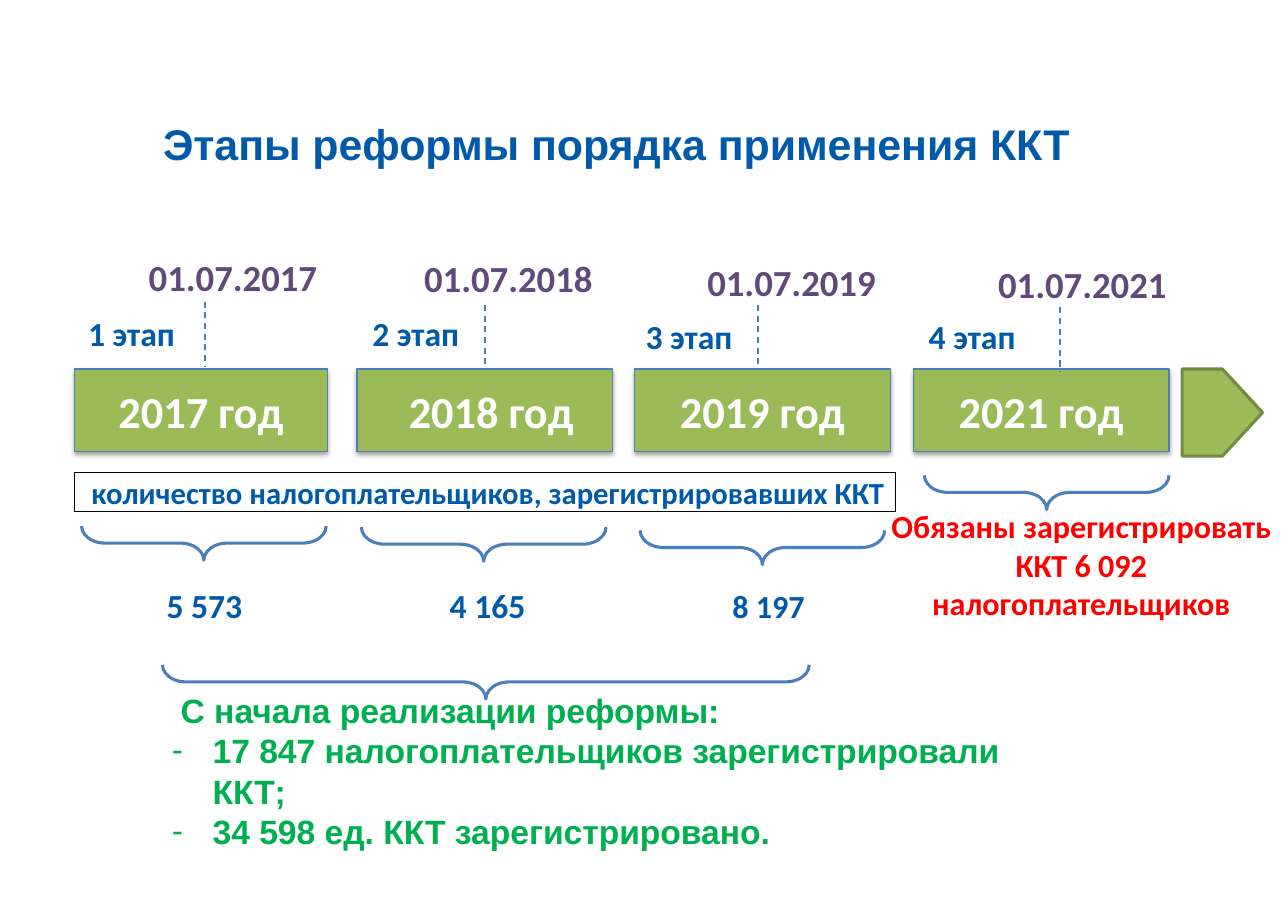
from dataclasses import dataclass

from lxml import etree
from pptx import Presentation
from pptx.dml.color import RGBColor
from pptx.enum.dml import MSO_LINE
from pptx.enum.shapes import MSO_CONNECTOR, MSO_SHAPE
from pptx.enum.text import MSO_ANCHOR, MSO_AUTO_SIZE, PP_ALIGN
from pptx.oxml import parse_xml
from pptx.oxml.ns import nsdecls, qn
from pptx.util import Inches, Pt

LEFT, CENTER = PP_ALIGN.LEFT, PP_ALIGN.CENTER
BLUE, GREEN, LINE_BLUE = "005AA9", "00B050", "4B7EBC"
BAR_GREEN, BAR_EDGE = "9BBB59", "738A42"
PURPLE, RED, WHITE, BLACK = "604A7B", "FF0000", "FFFFFF", "000000"
BAR_TOP, BAR_HEIGHT = 3.35, 0.75
BRACE_SPAN, BRACE_DEPTH = 2.22, 0.31


@dataclass
class Stage:
    year: str
    bar: tuple[float, float]  # left, width
    date_at: tuple[float, float]
    label_at: tuple[float, float]
    tick: tuple[float, float, float]  # x, top, bottom
    brace: tuple[float, float]  # centre
    count: str = ""
    count_left: float = 0
    count_size: float = 22
    shift: float = 0


STAGES = [
    Stage("2017", (0.68, 2.29), (1.2, 2.3), (0.65, 2.81), (1.86, 2.74, 3.32),
          (1.85, 4.93), "5 573", 0.91),
    Stage("2018", (3.24, 2.32), (3.7, 2.31), (3.23, 2.81), (4.4, 2.77, 3.35),
          (4.39, 4.94), "4 165", 3.48, shift=0.12),
    Stage("2019", (5.76, 2.32), (6.27, 2.34), (5.71, 2.84), (6.88, 2.77, 3.35),
          (6.92, 4.97), "8 197", 6.03, 21),
    Stage("2021", (8.29, 2.32), (8.91, 2.36), (8.28, 2.84), (9.62, 2.79, 3.38),
          (9.5, 4.47)),
]


def rgb(color: str) -> RGBColor:
    return RGBColor.from_string(color)


def place(sp, left: float, top: float, width: float, height: float) -> None:
    sp.left, sp.top = Inches(left), Inches(top)
    sp.width, sp.height = Inches(width), Inches(height)


def write(sp, text: str, *, size: float, color: str, font: str = "Calibri",
          align=LEFT, insets=(0.15, 0.07), shift: float = 0, wrap: bool = False):
    """Fill a shape with bold text, one paragraph a line; shift widens the left inset."""
    tf = sp.text_frame
    tf.text = text
    tf.auto_size = MSO_AUTO_SIZE.NONE
    tf.word_wrap = wrap
    tf.vertical_anchor = MSO_ANCHOR.MIDDLE
    tf.margin_left, tf.margin_right = Inches(insets[0] + shift), Inches(insets[0])
    tf.margin_top = tf.margin_bottom = Inches(insets[1])
    for p in tf.paragraphs:
        p.alignment = align
        p.space_before = Pt(0)
        for r in p.runs:
            r.font.size, r.font.bold, r.font.name = Pt(size), True, font
            r.font.color.rgb = rgb(color)
    return tf


def add_label(slide, text: str, left: float, top: float, width: float = 1.17,
              height: float = 0.43, **fmt) -> None:
    sp = slide.shapes.add_textbox(0, 0, 0, 0)
    place(sp, left, top, width, height)
    write(sp, text, **fmt)


def add_outline(slide, kind, left: float, top: float, width: float, height: float,
                *, line: str, weight: float, fill: str = ""):
    sp = slide.shapes.add_shape(kind, Inches(left), Inches(top), Inches(width), Inches(height))
    sp.shadow.inherit = False
    if fill:
        sp.fill.solid()
        sp.fill.fore_color.rgb = rgb(fill)
    else:
        sp.fill.background()
    sp.line.color.rgb = rgb(line)
    sp.line.width = Pt(weight)
    return sp


def add_brace(slide, cx: float, cy: float, span: float = BRACE_SPAN,
              depth: float = BRACE_DEPTH) -> None:
    """Draw a brace that points down, centred on (cx, cy)."""
    sp = add_outline(slide, MSO_SHAPE.LEFT_BRACE, cx - depth / 2, cy - span / 2,
                     depth, span, line=LINE_BLUE, weight=2)
    sp.adjustments[0] = 0.685
    sp.rotation = 270


def add_bar_shadow(sp) -> None:
    effects = sp._element.spPr.find(qn("a:effectLst"))
    effects.append(parse_xml(
        f'<a:outerShdw {nsdecls("a")} blurRad="{Pt(3.1)}" dist="{Pt(1.8)}" dir="5400000" '
        'rotWithShape="0"><a:srgbClr val="000000"><a:alpha val="35000"/></a:srgbClr>'
        '</a:outerShdw>'))


def add_tick(slide, bar, x: float, top: float, bottom: float) -> None:
    tick = slide.shapes.add_connector(MSO_CONNECTOR.STRAIGHT, Inches(x), Inches(top),
                                      Inches(x), Inches(bottom))
    if abs(bar.left + bar.width / 2 - Inches(x)) < Inches(0.01):
        tick.end_connect(bar, 0)
    tick.line.color.rgb = rgb(LINE_BLUE)
    tick.line.width = Pt(1)
    tick.line.dash_style = MSO_LINE.DASH
    etree.SubElement(tick._element.spPr, qn("a:effectLst"))


def add_stage(slide, number: int, stage: Stage) -> None:
    left, width = stage.bar
    bar = add_outline(slide, MSO_SHAPE.RECTANGLE, left, BAR_TOP, width, BAR_HEIGHT,
                      line=LINE_BLUE, weight=0.75, fill=BAR_GREEN)
    add_bar_shadow(bar)
    write(bar, f"{stage.year} год", size=29, color=WHITE, align=CENTER,
          insets=(0.13, 0.06), shift=stage.shift, wrap=True)
    add_label(slide, f"01.07.{stage.year}", *stage.date_at, size=24, color=PURPLE)
    add_label(slide, f"{number} этап", *stage.label_at, size=22, color=BLUE)
    add_tick(slide, bar, *stage.tick)
    add_brace(slide, *stage.brace)
    if stage.count:
        add_label(slide, stage.count, stage.count_left, 5.32, 1.89, 0.35,
                  size=stage.count_size, color=BLUE, align=CENTER)


def set_bullet(p, char: str, margin: float, indent: float) -> None:
    pPr = p._p.get_or_add_pPr()
    pPr.set("marL", str(Inches(margin)))
    pPr.set("indent", str(Inches(indent)))
    if char:
        etree.SubElement(pPr, qn("a:buChar")).set("char", char)
    else:
        etree.SubElement(pPr, qn("a:buNone"))


def add_summary(body) -> None:
    place(body, 1.41, 6.47, 8.41, 1.05)
    tf = write(body, "С начала реализации реформы:\n"
               "17 847 налогоплательщиков зарегистрировали ККТ;\n"
               "34 598 ед. ККТ зарегистрировано.", size=22, color=GREEN, font="Arial")
    heading, *items = tf.paragraphs
    set_bullet(heading, "", 0.08, 0)
    for p in items:
        set_bullet(p, "-", 0.37, -0.37)


def main() -> None:
    prs = Presentation()
    prs.slide_width, prs.slide_height = Inches(11.69), Inches(8.27)
    slide = prs.slides.add_slide(prs.slide_layouts[1])

    title = slide.shapes.title
    place(title, 1.37, 0.75, 9.38, 0.85)
    tf = write(title, "Этапы реформы порядка применения ККТ", size=28, color=BLUE,
               font="Arial", insets=(0.11, 0.06), wrap=True)
    tf.paragraphs[0].line_spacing = Pt(52)

    for number, stage in enumerate(STAGES, 1):
        add_stage(slide, number, stage)
    add_outline(slide, MSO_SHAPE.PENTAGON, 10.73, BAR_TOP, 0.73, 0.79,
                line=BAR_EDGE, weight=2, fill=BAR_GREEN)

    caption = add_outline(slide, MSO_SHAPE.RECTANGLE, 0.68, 4.29, 7.45, 0.35,
                          line=BLACK, weight=0.75)
    write(caption, "количество налогоплательщиков, зарегистрировавших ККТ",
          size=20, color=BLUE, align=CENTER, shift=0.05)
    add_label(slide, "Обязаны зарегистрировать\nККТ 6 092\nналогоплательщиков",
              8.26, 4.52, 3.11, 1.21, size=21, color=RED, align=CENTER)

    add_brace(slide, 4.41, 6.19, span=5.87)
    add_summary(slide.placeholders[1])
    prs.save("out.pptx")


if __name__ == "__main__":
    main()
